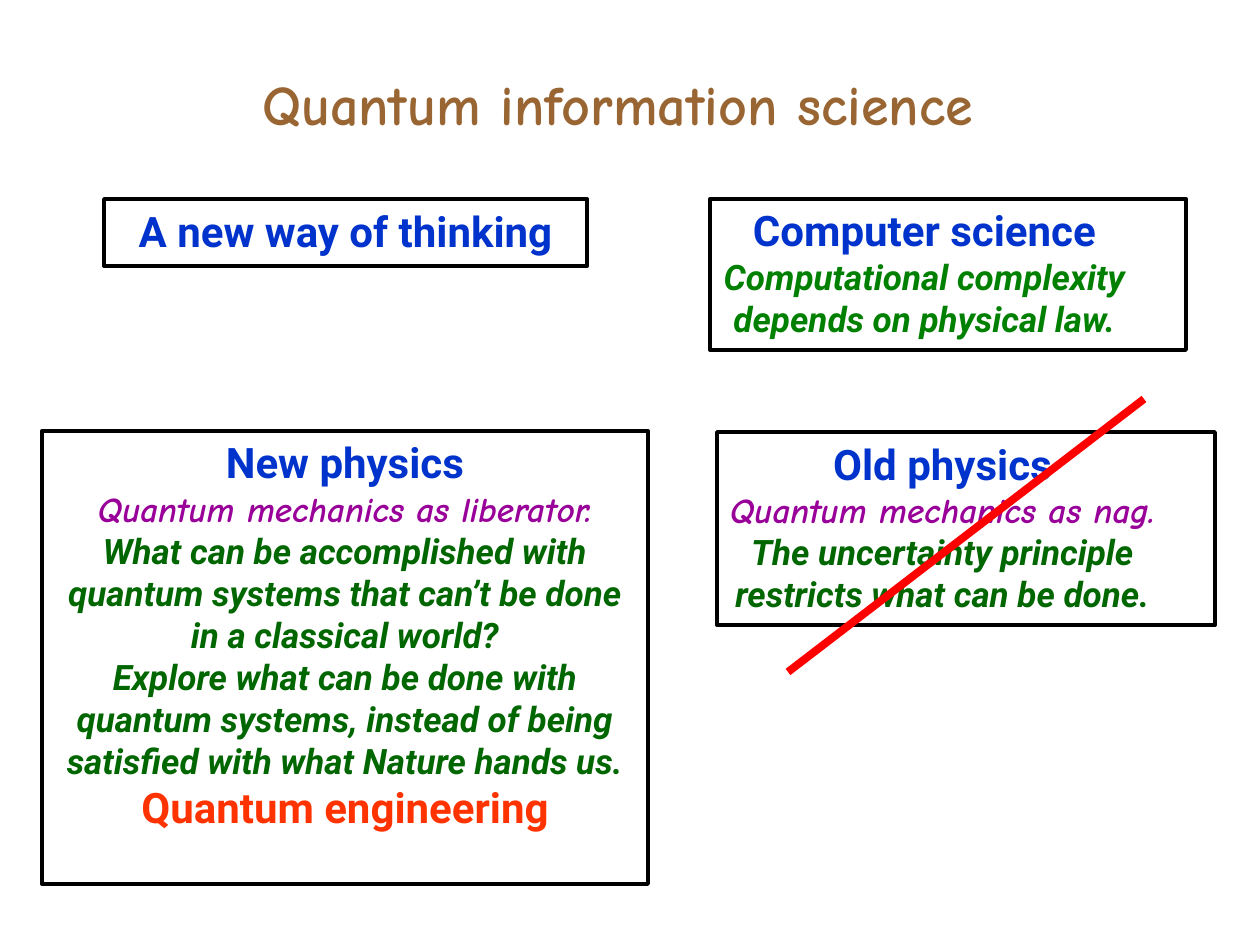
from lxml import etree
from pptx import Presentation
from pptx import util as u
from pptx.dml.color import RGBColor
from pptx.enum import shapes, text
from pptx.oxml.ns import qn

PX_PER_INCH = 126
HEAD, BODY = "Roboto", "Comic Neue"
COLORS = {
    "title": "996633", "heading": "0033CC", "motto": "990099",
    "law": "008000", "detail": "006600", "engineering": "FF3300",
    "border": "000000", "strike": "FF0000",
}

# role: font, size, bold, italic
STYLES = {
    "title": ("Comic Neue", 32, True, False),
    "heading": ("Roboto", 24, True, False),
    "motto": ("Comic Neue", 20, True, True),
    "law": ("Roboto", 20, True, True),
    "detail": ("Roboto", 20, True, True),
    "engineering": ("Roboto", 24, True, False),
}

# left, top, width, height, right inset, then (role, wording) lines
TOPICS = [
    ((104, 199, 483, 67), 13, [("heading", "A new way of thinking")]),
    ((710, 199, 476, 151), 50, [
        ("heading", "Computer science"),
        ("law", "Computational complexity"),
        ("law", "depends on physical law."),
    ]),
    ((717, 432, 498, 193), 50, [
        ("heading", "Old physics"),
        ("motto", "Quantum mechanics as nag."),
        ("detail", "The uncertainty principle"),
        ("detail", "restricts what can be done."),
    ]),
    ((42, 431, 606, 453), 13, [
        ("heading", "New physics"),
        ("motto", "Quantum mechanics as liberator."),
        ("detail", "What can be accomplished with quantum systems "
                   "that can’t be done in a classical world?"),
        ("detail", "Explore what can be done with quantum systems, "
                   "instead of being satisfied with what Nature hands us."),
        ("engineering", "Quantum engineering"),
    ]),
]


def px(length):
    return u.Emu(round(length * 914400 / PX_PER_INCH))


def color(role):
    return RGBColor.from_string(COLORS[role])


def write_lines(frame, lines, left_inset=13, right_inset=13):
    frame.word_wrap = True
    frame.auto_size = text.MSO_AUTO_SIZE.NONE
    frame.vertical_anchor = text.MSO_ANCHOR.TOP
    frame.margin_left, frame.margin_right = px(left_inset), px(right_inset)
    frame.margin_top = frame.margin_bottom = px(6)
    frame.text = "\n".join(wording for _, wording in lines)
    for paragraph, (role, _) in zip(frame.paragraphs, lines):
        paragraph.alignment = text.PP_ALIGN.CENTER
        font = paragraph.runs[0].font
        font.name, size, font.bold, font.italic = STYLES[role]
        font.size = u.Pt(size)
        font.color.rgb = color(role)


def set_title(slide, wording):
    title = slide.shapes.title
    title.left, title.top, title.width, title.height = map(px, (193, 63, 850, 79))
    write_lines(title.text_frame, [("title", wording)])


def add_topic(slide, place, right_inset, lines):
    topic = slide.shapes.add_shape(shapes.MSO_SHAPE.RECTANGLE, *map(px, place))
    topic.shadow.inherit = False
    topic.fill.background()
    topic.line.color.rgb = color("border")
    topic.line.width = u.Pt(2.25)
    # A wide right inset moves the centred lines to the left
    left_inset = 13 if right_inset == 13 else 3
    write_lines(topic.text_frame, lines, left_inset, right_inset)


def add_strike(slide, start, end):
    strike = slide.shapes.add_connector(
        shapes.MSO_CONNECTOR.STRAIGHT, *map(px, start + end))
    strike.line.color.rgb = color("strike")
    strike.line.width = u.Pt(4.5)
    etree.SubElement(strike._element.spPr, qn("a:effectLst"))


def main():
    deck = Presentation()
    deck.slide_width, deck.slide_height = px(1260), px(945)
    slide = deck.slides.add_slide(deck.slide_layouts[5])

    set_title(slide, "Quantum information science")
    for place, right_inset, lines in TOPICS:
        add_topic(slide, place, right_inset, lines)

    # Old physics is crossed out
    add_strike(slide, (788, 672), (1144, 399))
    deck.save("out.pptx")


if __name__ == "__main__":
    main()
